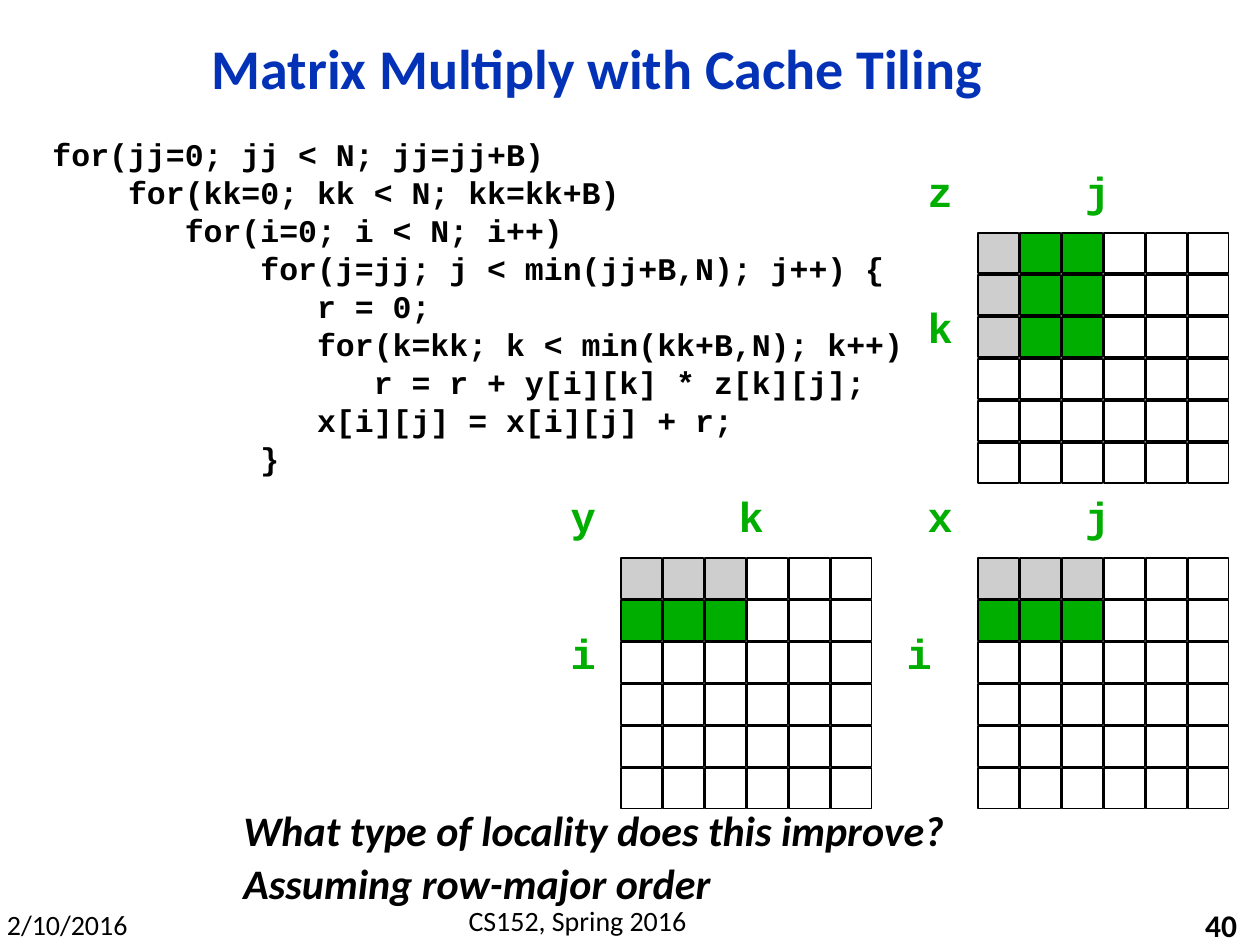
from pptx import Presentation
from pptx.dml.color import RGBColor
from pptx.enum.shapes import MSO_SHAPE
from pptx.enum.text import MSO_ANCHOR, MSO_AUTO_SIZE, PP_ALIGN
from pptx.util import Pt

COLORS = {"black": "000000", "white": "FFFFFF", "title": "0332B7",
          "done": "CECECE", "active": "00AE00"}
CELL_FILLS = {".": "white", "d": "done", "a": "active"}
GRID_SIZE, PITCH, CELL = 6, 24, 23
CHAR_WIDTH = 10.8

CODE = [
    (0, "for(jj=0; jj < N; jj=jj+B)"),
    (4, "for(kk=0; kk < N; kk=kk+B)"),
    (7, "for(i=0; i < N; i++)"),
    (11, "for(j=jj; j < min(jj+B,N); j++) {"),
    (14, "r = 0;"),
    (14, "for(k=kk; k < min(kk+B,N); k++)"),
    (17, "r = r + y[i][k] * z[k][j];"),
    (14, "x[i][j] = x[i][j] + r;"),
    (11, "}"),
]

ROW_TILE = ["ddd", "aaa"]
COLUMN_TILE = ["daa"] * 3
MATRICES = [
    (355, 319, ROW_TILE, [("y", -36, -42), ("k", 60, -42), ("i", -36, 36)]),
    (559, 133, COLUMN_TILE, [("z", -36, -42), ("j", 54, -42), ("k", -36, 36)]),
    (559, 319, ROW_TILE, [("x", -36, -42), ("j", 54, -42), ("i", -48, 36)]),
]


def rgb(name):
    return RGBColor.from_string(COLORS[name])


def write(p, text, size=18, font="Calibri", color="black", bold=False,
          italic=False, align=PP_ALIGN.LEFT, spacing=None, before=0):
    p.alignment = align
    p.line_spacing = spacing
    p.space_before = Pt(before)
    r = p.add_run()
    r.text = text
    r.font.size = Pt(size)
    r.font.name = font
    r.font.bold = bold
    r.font.italic = italic
    r.font.color.rgb = rgb(color)


class SlideBuilder:
    def __init__(self, prs):
        self.s = prs.slides.add_slide(prs.slide_layouts[1])

    def place(self, sp, x, y, w, h):
        sp.left, sp.top, sp.width, sp.height = Pt(x), Pt(y), Pt(w), Pt(h)
        sp.text_frame.auto_size = MSO_AUTO_SIZE.NONE
        return sp.text_frame

    def title(self, text, x, y, w, h):
        tf = self.place(self.s.shapes.title, x, y, w, h)
        tf.vertical_anchor = MSO_ANCHOR.MIDDLE
        write(tf.paragraphs[0], text, size=32, color="title", bold=True,
              align=PP_ALIGN.CENTER, spacing=0.9)

    def code(self, lines, x, y, w, h):
        tf = self.place(self.s.placeholders[1], x, y, w, h)
        tf.margin_top = Pt(5)
        for i, (column, text) in enumerate(lines):
            p = tf.add_paragraph() if i else tf.paragraphs[0]
            write(p, text, font="Courier New", bold=True, spacing=Pt(21.7))
            pPr = p._p.get_or_add_pPr()
            pPr.set("marL", str(Pt(46.8 + CHAR_WIDTH * column)))
            pPr.set("indent", "0")
            pPr.insert_element_before(
                pPr.makeelement(
                    "{http://schemas.openxmlformats.org/drawingml/2006/main}buNone", {}),
                "a:tabLst", "a:defRPr", "a:extLst")

    def text(self, lines, x, y, w, h, shapes=None, wrap=False,
             anchor=MSO_ANCHOR.TOP, **style):
        sp = (shapes or self.s.shapes).add_textbox(Pt(x), Pt(y), Pt(w), Pt(h))
        tf = sp.text_frame
        tf.word_wrap = wrap
        tf.vertical_anchor = anchor
        for i, line in enumerate(lines):
            p = tf.add_paragraph() if i else tf.paragraphs[0]
            write(p, line, **style)

    def cell(self, shapes, x, y, fill):
        sp = shapes.add_shape(MSO_SHAPE.RECTANGLE, Pt(x), Pt(y), Pt(CELL), Pt(CELL))
        sp.shadow.inherit = False
        sp.fill.solid()
        sp.fill.fore_color.rgb = rgb(fill)
        sp.line.color.rgb = rgb("black")
        sp.line.width = Pt(1)

    def matrix(self, x, y, tile, labels):
        shapes = self.s.shapes.add_group_shape().shapes
        for row in range(GRID_SIZE):
            marks = tile[row] if row < len(tile) else ""
            for col, mark in enumerate(marks.ljust(GRID_SIZE, ".")):
                self.cell(shapes, x + col * PITCH, y + row * PITCH, CELL_FILLS[mark])
        for name, dx, dy in labels:
            self.text([name], x + dx, y + dy, 28.8, 36, shapes=shapes, size=24,
                      font="Courier New", color="active", bold=True)


def main():
    prs = Presentation()
    prs.slide_width, prs.slide_height = Pt(720), Pt(540)
    b = SlideBuilder(prs)
    b.title("Matrix Multiply with Cache Tiling", 54, 12, 575, 58)
    b.code(CODE, -24, 72, 564, 246)
    b.text(["2/10/2016"], -3.6, 515, 84, 26.6, size=16, align=PP_ALIGN.CENTER)
    b.text(["CS152, Spring 2016"], 210, 513, 240, 26.6, wrap=True, size=16,
           align=PP_ALIGN.CENTER)
    b.text(["40"], 564, 517, 150, 23, anchor=MSO_ANCHOR.MIDDLE, bold=True,
           align=PP_ALIGN.RIGHT)
    b.text(["What type of locality does this improve?", "Assuming row-major order"],
           132, 462, 425, 63.4, size=24, bold=True, italic=True, spacing=0.8, before=7.2)
    for matrix in MATRICES:
        b.matrix(*matrix)
    prs.save("out.pptx")


if __name__ == "__main__":
    main()
